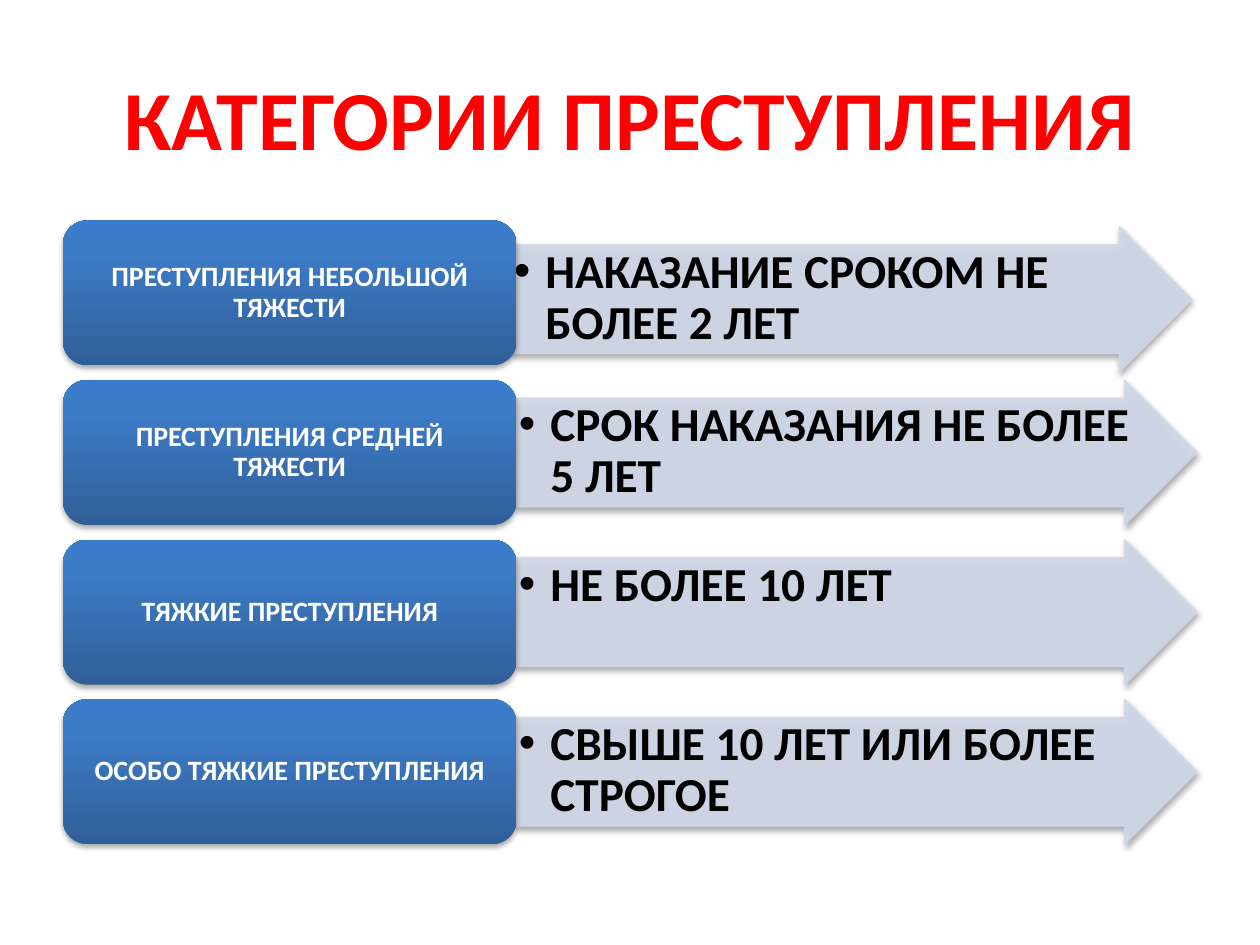
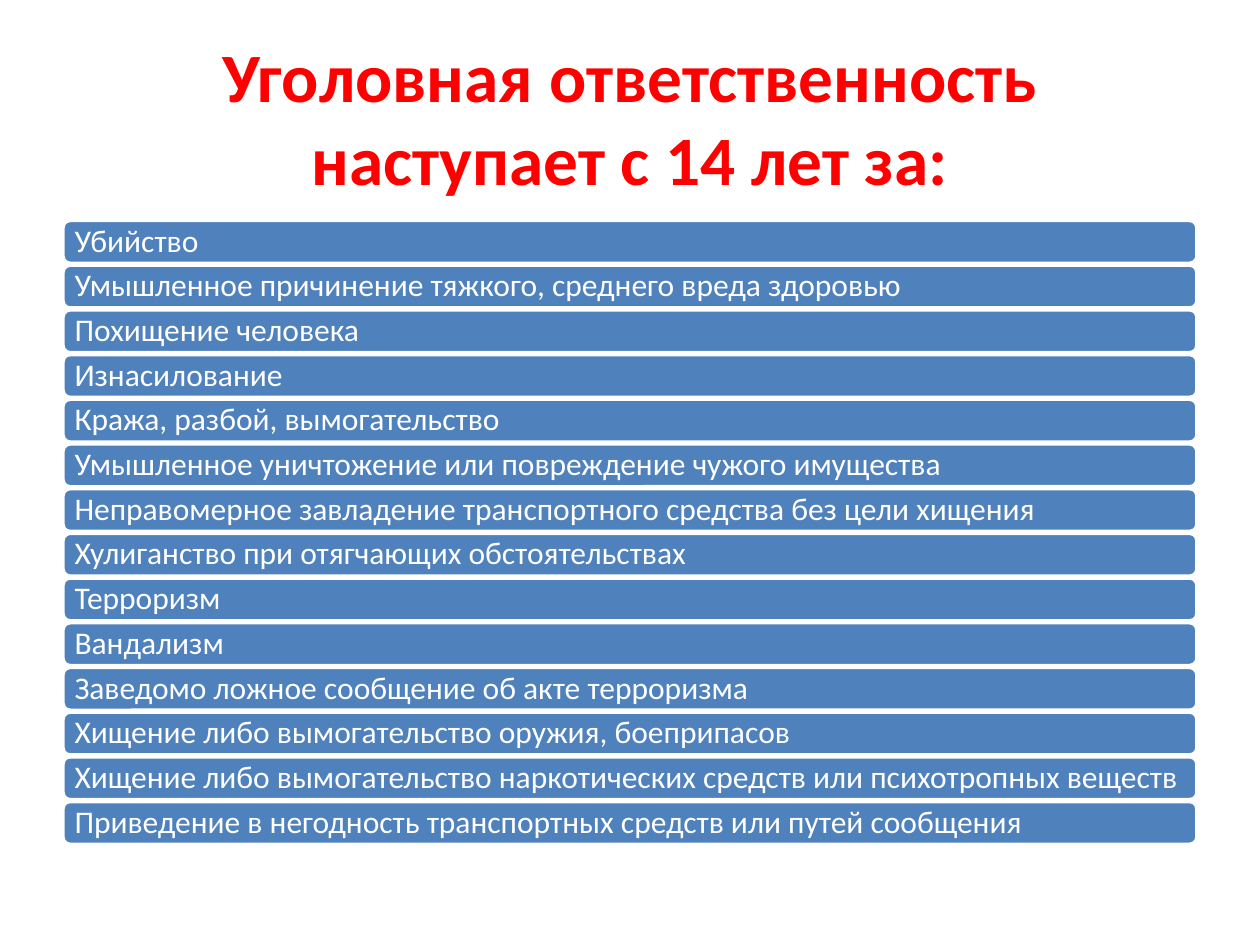
from copy import deepcopy
from dataclasses import dataclass

from lxml.etree import SubElement
from pptx import Presentation
from pptx.dml.color import RGBColor
from pptx.enum.shapes import MSO_SHAPE as Preset
from pptx.enum.text import MSO_ANCHOR as Anchor, MSO_AUTO_SIZE as AutoSize, PP_ALIGN as Align
from pptx.oxml.ns import qn
from pptx.util import Pt


@dataclass(frozen=True)
class Theme:
    font: str = "Calibri"
    title: str = "FF0000"
    light: str = "FFFFFF"
    dark: str = "000000"
    arrow: str = "D0D8E8"
    bar: str = "4F81BD"
    label_stops: tuple = ((0, "2F5F99"), (0.8, "3D7CC7"), (1, "3A7CCB"))
    category_title_size: float = 48
    offence_title_size: float = 39.6
    label_size: float = 16
    penalty_size: float = 27
    bar_size: float = 18
    opacity: int = 90
    shadow_opacity: int = 35


CATEGORIES = (
    ("ПРЕСТУПЛЕНИЯ НЕБОЛЬШОЙ ТЯЖЕСТИ", "НАКАЗАНИЕ СРОКОМ НЕ БОЛЕЕ 2 ЛЕТ"),
    ("ПРЕСТУПЛЕНИЯ СРЕДНЕЙ ТЯЖЕСТИ", "СРОК НАКАЗАНИЯ НЕ БОЛЕЕ 5 ЛЕТ"),
    ("ТЯЖКИЕ ПРЕСТУПЛЕНИЯ", "НЕ БОЛЕЕ 10 ЛЕТ"),
    ("ОСОБО ТЯЖКИЕ ПРЕСТУПЛЕНИЯ", "СВЫШЕ 10 ЛЕТ ИЛИ БОЛЕЕ СТРОГОЕ"),
)

OFFENCES = (
    "Убийство",
    "Умышленное причинение тяжкого, среднего вреда здоровью",
    "Похищение человека",
    "Изнасилование",
    "Кража, разбой, вымогательство",
    "Умышленное уничтожение или повреждение чужого имущества",
    "Неправомерное завладение транспортного средства без цели хищения",
    "Хулиганство при отягчающих обстоятельствах",
    "Терроризм",
    "Вандализм",
    "Заведомо ложное сообщение об акте терроризма",
    "Хищение либо вымогательство оружия, боеприпасов",
    "Хищение либо вымогательство наркотических средств или психотропных веществ",
    "Приведение в негодность транспортных средств или путей сообщения",
)

LEFT, TOP, WIDTH = 36, 126, 648
LABEL_WIDTH, ROW_HEIGHT, ROW_STEP = 259.2, 82.8, 91.2
BAR_HEIGHT, BAR_STEP = 24.5, 25.54


def apply(target, values):
    for name, value in values.items():
        setattr(target, name, value)


class Deck:
    def __init__(self, theme):
        self.theme = theme
        self.presentation = Presentation()
        apply(self.presentation, {"slide_width": Pt(720), "slide_height": Pt(540)})
        self.slide = None

    def add_slide(self, title, size):
        layout = self.presentation.slide_layouts[5]
        self.slide = self.presentation.slides.add_slide(layout)
        shape = self.slide.shapes.title
        box = {"left": LEFT, "top": 21.6, "width": WIDTH, "height": 90}
        apply(shape, {name: Pt(value) for name, value in box.items()})
        self.fill_text(shape, title, size, self.theme.title, bold=True, spacing=None)

    def fill_text(self, shape, text, size, color, bold=False, align=Align.CENTER,
                  anchor=Anchor.MIDDLE, padding=(7.2, 3.6), spacing=0.9):
        horizontal, vertical = map(Pt, padding)
        frame = shape.text_frame
        apply(frame, {
            "word_wrap": True, "auto_size": AutoSize.NONE, "vertical_anchor": anchor,
            "margin_left": horizontal, "margin_right": horizontal,
            "margin_top": vertical, "margin_bottom": vertical,
        })
        paragraph = frame.paragraphs[0]
        apply(paragraph, {"alignment": align, "line_spacing": spacing})
        run = paragraph.add_run()
        run.text = text
        apply(run.font, {"name": self.theme.font, "size": Pt(size), "bold": bold})
        run.font.color.rgb = RGBColor.from_string(color)
        return paragraph

    def add_block(self, preset, left, top, width, height):
        shape = self.slide.shapes.add_shape(preset, *map(Pt, (left, top, width, height)))
        shape.shadow.inherit = False
        return shape

    def paint(self, shape, fill, line, line_width):
        shape.fill.solid()
        shape.fill.fore_color.rgb = RGBColor.from_string(fill)
        shape.line.color.rgb = RGBColor.from_string(line)
        shape.line.width = Pt(line_width)

    def cast_shadow(self, shape):
        effects = shape.element.spPr.find(qn("a:effectLst"))
        shadow = SubElement(effects, qn("a:outerShdw"), blurRad=str(Pt(3.1)),
                            dist=str(Pt(1.8)), dir="5400000", rotWithShape="0")
        color = SubElement(shadow, qn("a:srgbClr"), val=self.theme.dark)
        self.set_opacity(color, self.theme.shadow_opacity)

    def set_opacity(self, color, percent):
        SubElement(color, qn("a:alpha"), val=str(percent * 1000))

    def add_bullet(self, paragraph, indent):
        properties = paragraph._p.get_or_add_pPr()
        properties.set("marL", str(Pt(indent)))
        properties.set("indent", str(-Pt(indent)))
        SubElement(properties, qn("a:buFont"), typeface="Arial")
        SubElement(properties, qn("a:buChar"), char="•")

    def add_penalty_arrow(self, text, left, top):
        theme = self.theme
        shape = self.add_block(Preset.RIGHT_ARROW, left, top,
                               WIDTH - LABEL_WIDTH, ROW_HEIGHT)
        shape.adjustments[0] = 0.75
        self.paint(shape, theme.arrow, theme.arrow, 0.75)
        for color in shape.element.spPr.iter(qn("a:srgbClr")):
            self.set_opacity(color, theme.opacity)
        self.cast_shadow(shape)
        paragraph = self.fill_text(shape, text, theme.penalty_size, theme.dark, bold=True,
                                   align=Align.LEFT, anchor=Anchor.TOP, padding=(1.35, 1.35))
        self.add_bullet(paragraph, 18)

    def add_category_label(self, text, top):
        theme = self.theme
        shape = self.add_block(Preset.ROUNDED_RECTANGLE, LEFT, top, LABEL_WIDTH, ROW_HEIGHT)
        shape.line.fill.background()
        shape.fill.gradient()
        shape.fill.gradient_angle = 90
        stop_list = shape.element.spPr.find(f".//{qn('a:gsLst')}")
        stop_list.append(deepcopy(stop_list[-1]))
        for stop, (position, color) in zip(shape.fill.gradient_stops, theme.label_stops):
            stop.position = position
            stop.color.rgb = RGBColor.from_string(color)
        self.cast_shadow(shape)
        self.fill_text(shape, text, theme.label_size, theme.light, bold=True,
                       padding=(4.8, 2.4))

    def add_offence_bar(self, text, top):
        theme = self.theme
        shape = self.add_block(Preset.ROUNDED_RECTANGLE, LEFT, top, WIDTH, BAR_HEIGHT)
        self.paint(shape, theme.bar, theme.light, 2)
        self.fill_text(shape, text, theme.bar_size, theme.light,
                       align=Align.LEFT, padding=(5.4, 5.4))


def main():
    theme = Theme()
    deck = Deck(theme)

    deck.add_slide("КАТЕГОРИИ ПРЕСТУПЛЕНИЯ", theme.category_title_size)
    for row, (category, penalty) in enumerate(CATEGORIES):
        top = TOP + row * ROW_STEP
        shift_left, shift_down = (2.9, 3.6) if row == 0 else (0, 0)
        deck.add_penalty_arrow(penalty, LEFT + LABEL_WIDTH - shift_left, top + shift_down)
        deck.add_category_label(category, top)

    deck.add_slide("Уголовная ответственность наступает с 14 лет за:",
                   theme.offence_title_size)
    for row, offence in enumerate(OFFENCES):
        deck.add_offence_bar(offence, TOP + row * BAR_STEP)

    deck.presentation.save("out.pptx")


if __name__ == "__main__":
    main()
